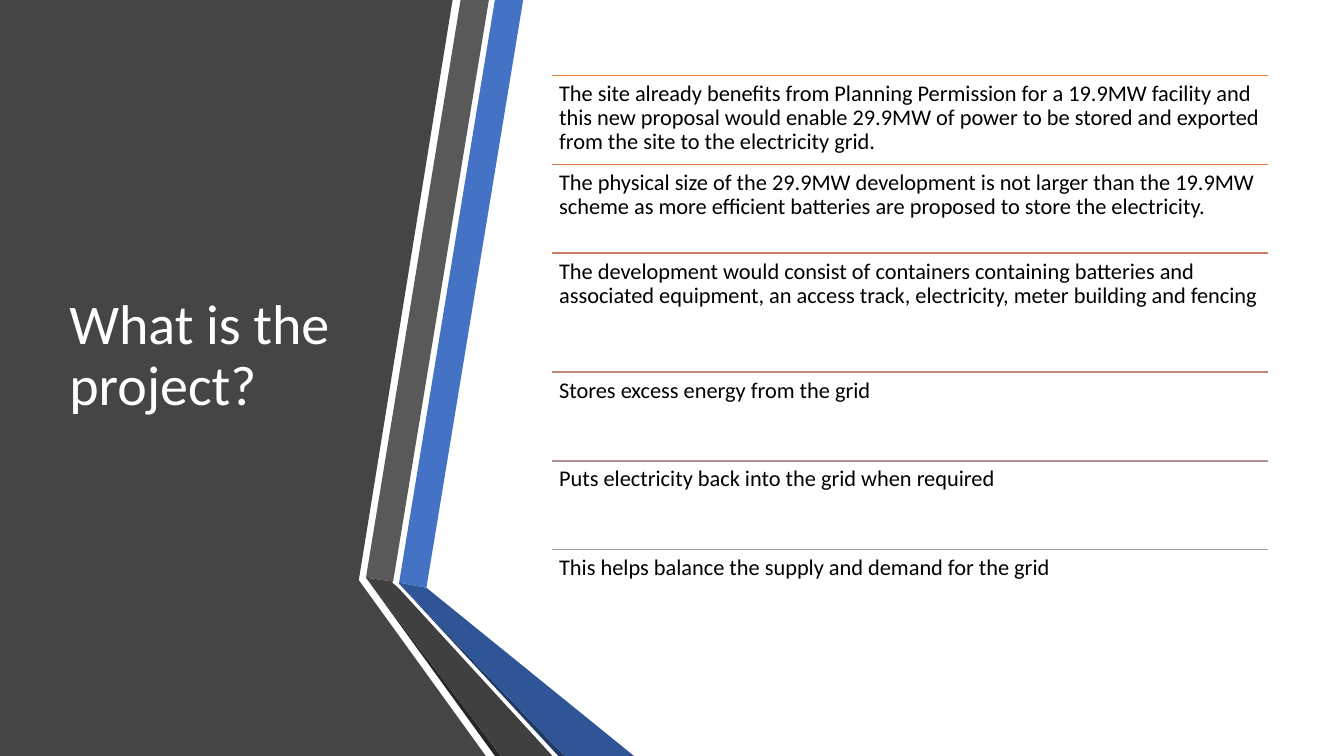
"""Builds the project overview slide: a faceted title panel beside six ruled statements."""
from dataclasses import dataclass

from lxml.etree import SubElement
from pptx import Presentation
from pptx.dml.color import RGBColor as Color
from pptx.enum.shapes import MSO_CONNECTOR as Connector
from pptx.enum.text import MSO_ANCHOR as Anchor
from pptx.oxml.ns import qn
from pptx.util import Pt


@dataclass(frozen=True)
class Theme:
    font: str = "Calibri"
    title_size: int = 40
    body_size: int = 16
    title: str = "FFFFFF"
    body: str = "000000"
    panel: str = "454545"
    blue: str = "4472C4"
    blue_fold: str = "2F5597"
    blue_edge: str = "203864"
    grey: str = "595959"
    grey_fold: str = "404040"
    grey_edge: str = "262626"
    rules: tuple = ("ED7D31", "DC7A4B", "CC7D64", "BD867B", "B09391", "A5A5A5")


theme = Theme()


def add_text(page, text, left, top, width, height, *, size, color,
             anchor=Anchor.TOP, inset=(7.2, 3.6), after=0):
    box = page.shapes.add_textbox(Pt(left), Pt(top), Pt(width), Pt(height))
    frame = box.text_frame
    frame.word_wrap = True
    frame.vertical_anchor = anchor
    frame.margin_left = frame.margin_right = Pt(inset[0])
    frame.margin_top = frame.margin_bottom = Pt(inset[1])
    para = frame.paragraphs[0]
    para.line_spacing = 0.9
    para.space_after = Pt(after)
    span = para.add_run()
    span.text = text
    span.font.name = theme.font
    span.font.size = Pt(size)
    span.font.color.rgb = Color.from_string(color)


deck = Presentation()
deck.slide_width, deck.slide_height = Pt(960), Pt(540)
page = deck.slides.add_slide(deck.slide_layouts[6])

facets = [
    (theme.panel, [(0, 0), (323.3, 0), (256.3, 414.4), (347, 540), (0, 540)]),
    (theme.blue, [(285.1, 416.2), (304.6, 419.8), (373.7, 0), (353.5, 0)]),
    (theme.grey, [(349.2, 0), (329, 0), (261.4, 412.6), (280.8, 415.4)]),
    (theme.grey_edge, [(261.4, 412.6), (353.5, 540), (357.8, 540)]),
    (theme.blue_edge, [(285.1, 416.9), (398.9, 540), (403.2, 540)]),
    (theme.blue_fold, [(285.1, 416.2), (285.1, 416.9), (403.2, 540),
                       (452.9, 540), (304.6, 419.8)]),
    (theme.grey_fold, [(394.6, 540), (284.4, 419.8), (280.1, 416.2),
                       (280.8, 415.4), (261.4, 412.6), (357.8, 540)]),
]
for color, corners in facets:
    points = [(Pt(x), Pt(y)) for x, y in corners]
    outline = page.shapes.build_freeform(*points[0])
    outline.add_line_segments(points[1:], close=True)
    facet = outline.convert_to_shape()
    facet.shadow.inherit = False
    facet.fill.solid()
    facet.fill.fore_color.rgb = Color.from_string(color)
    facet.line.fill.background()

add_text(page, "What is the project?", 42.5, 54, 218.9, 401.8,
         size=theme.title_size, color=theme.title, anchor=Anchor.MIDDLE)

row_height, tall_row_height = 63.4, 85
statements = [
    ("The site already benefits from Planning Permission for a 19.9MW facility and "
     "this new proposal would enable 29.9MW of power to be stored and exported "
     "from the site to the electricity grid.", row_height),
    ("The physical size of the 29.9MW development is not larger than the 19.9MW "
     "scheme as more efficient batteries are proposed to store the electricity.", row_height),
    ("The development would consist of containers containing batteries and "
     "associated equipment, an access track, electricity, meter building and fencing",
     tall_row_height),
    ("Stores excess energy from the grid", row_height),
    ("Puts electricity back into the grid when required", row_height),
    ("This helps balance the supply and demand for the grid", row_height),
]
left, top, width = 394.6, 54, 511.2
for color, (statement, height) in zip(theme.rules, statements):
    rule = page.shapes.add_connector(
        Connector.STRAIGHT, Pt(left), Pt(top), Pt(left + width), Pt(top))
    rule.line.color.rgb = Color.from_string(color)
    rule.line.width = Pt(1)
    SubElement(rule._element.spPr, qn("a:effectLst"))
    add_text(page, statement, left, top, width, height, size=theme.body_size,
             color=theme.body, inset=(4.8, 4.8), after=5.6)
    top += height

deck.save("out.pptx")
